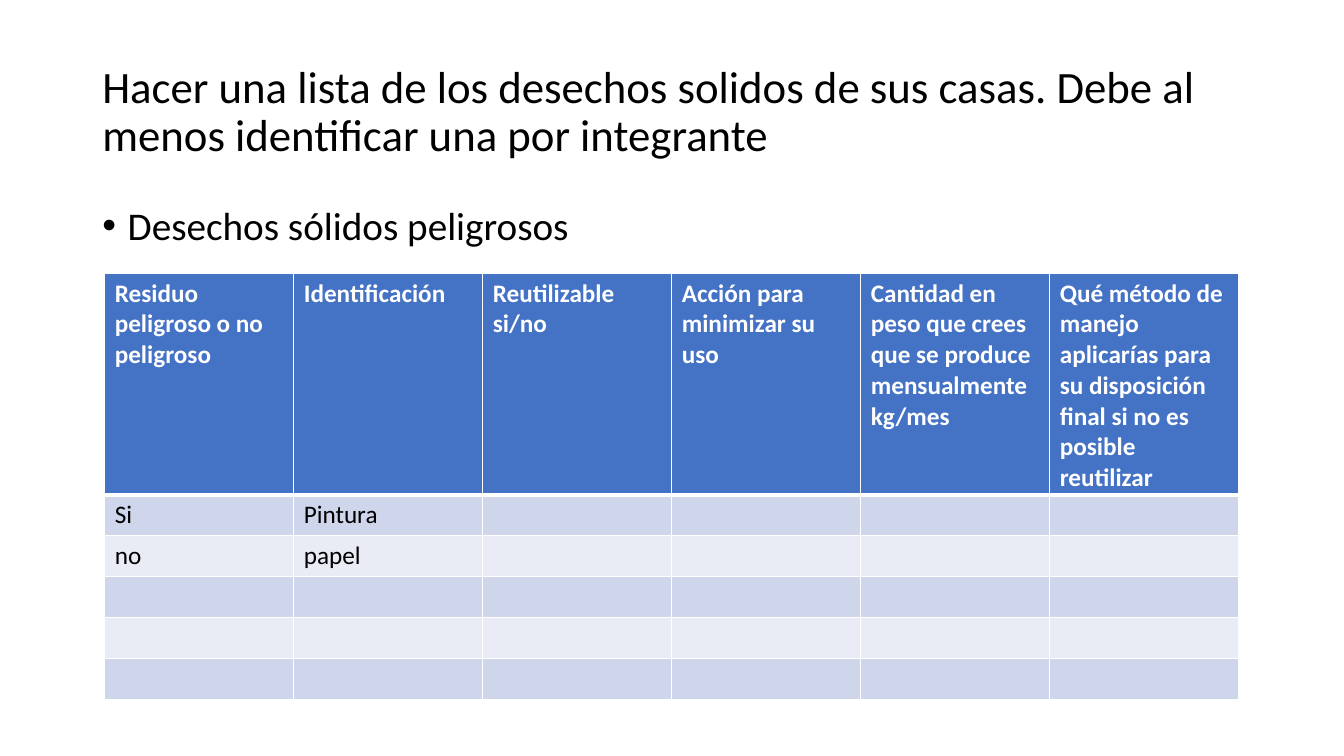
from lxml.etree import SubElement
from pptx import Presentation
from pptx.dml.color import RGBColor
from pptx.enum.text import MSO_ANCHOR as Anchor
from pptx.oxml.ns import qn
from pptx.util import Cm, Pt

TITLE = ("Hacer una lista de los desechos solidos de sus casas. "
         "Debe al menos identificar una por integrante")
SUBTITLE = "Desechos sólidos peligrosos"
HEADERS = [
    "Residuo peligroso o no peligroso",
    "Identificación",
    "Reutilizable si/no",
    "Acción para minimizar su uso",
    "Cantidad en peso que crees que se produce mensualmente kg/mes",
    "Qué método de manejo aplicarías para su disposición final "
    "si no es posible reutilizar",
]
WASTE = [("Si", "Pintura"), ("no", "papel"), (), (), ()]

FONT = "Calibri"
BLACK, WHITE, HEADER_BLUE = "000000", "FFFFFF", "4472C4"
BANDS = ["CFD5EA", "E9EBF5"]

MARGIN, TEXT_WIDTH = 2.33, 29.21
TABLE_LEFT, TABLE_TOP, TABLE_WIDTH = 2.64, 6.88, 28.58
HEADER_HEIGHT, ROW_HEIGHT = 5.59, 1.03
BULLET_INDENT = 0.64


def color(value):
    return RGBColor.from_string(value)


def write(frame, text, size=18, fill=BLACK, bold=False, line_spacing=None):
    frame.word_wrap = True
    paragraph = frame.paragraphs[0]
    paragraph.line_spacing = line_spacing
    run = paragraph.add_run()
    run.text = text
    font = run.font
    font.name, font.size, font.bold = FONT, Pt(size), bold
    font.color.rgb = color(fill)
    return paragraph


def add_bullet(paragraph):
    properties = paragraph._p.get_or_add_pPr()
    properties.set("marL", str(Cm(BULLET_INDENT)))
    properties.set("indent", str(-Cm(BULLET_INDENT)))
    SubElement(properties, qn("a:buFont"), typeface="Arial")
    SubElement(properties, qn("a:buChar"), char="•")


def add_borders(cell, bottom):
    """Draw white borders, one point wide except for the bottom one."""
    properties = cell._tc.get_or_add_tcPr()
    for side, width in (("L", 1), ("R", 1), ("T", 1), ("B", bottom)):
        line = SubElement(properties, qn(f"a:ln{side}"), w=str(Pt(width)))
        solid = SubElement(line, qn("a:solidFill"))
        SubElement(solid, qn("a:srgbClr"), val=WHITE)


def add_text(slide, top, height, text, anchor=Anchor.TOP, **style):
    box = slide.shapes.add_textbox(Cm(MARGIN), Cm(top), Cm(TEXT_WIDTH), Cm(height))
    box.text_frame.vertical_anchor = anchor
    return write(box.text_frame, text, line_spacing=0.9, **style)


def add_waste_table(slide):
    rows = [HEADERS, *WASTE]
    heights = [HEADER_HEIGHT] + [ROW_HEIGHT] * len(WASTE)
    table = slide.shapes.add_table(
        len(rows), len(HEADERS), Cm(TABLE_LEFT), Cm(TABLE_TOP),
        Cm(TABLE_WIDTH), Cm(sum(heights))).table
    for row_index, (texts, height) in enumerate(zip(rows, heights)):
        row = table.rows[row_index]
        row.height = Cm(height)
        header = row_index == 0
        for column, cell in enumerate(row.cells):
            # The thick rule under the header is also the top of the first row.
            add_borders(cell, bottom=3 if header else 1)
            if row_index == 1:
                cell._tc.tcPr.find(qn("a:lnT")).set("w", str(Pt(3)))
            cell.fill.solid()
            cell.fill.fore_color.rgb = color(
                HEADER_BLUE if header else BANDS[(row_index - 1) % 2])
            if column < len(texts):
                write(cell.text_frame, texts[column],
                      fill=WHITE if header else BLACK, bold=header)


def main():
    presentation = Presentation()
    presentation.slide_width, presentation.slide_height = Cm(33.87), Cm(19.05)
    slide = presentation.slides.add_slide(presentation.slide_layouts[6])
    add_text(slide, 1.01, 3.68, TITLE, anchor=Anchor.MIDDLE, size=32)
    subtitle = add_text(slide, 5.07, 12.09, SUBTITLE, size=28)
    subtitle.space_before = Pt(10)
    add_bullet(subtitle)
    add_waste_table(slide)
    presentation.save("out.pptx")


if __name__ == "__main__":
    main()
